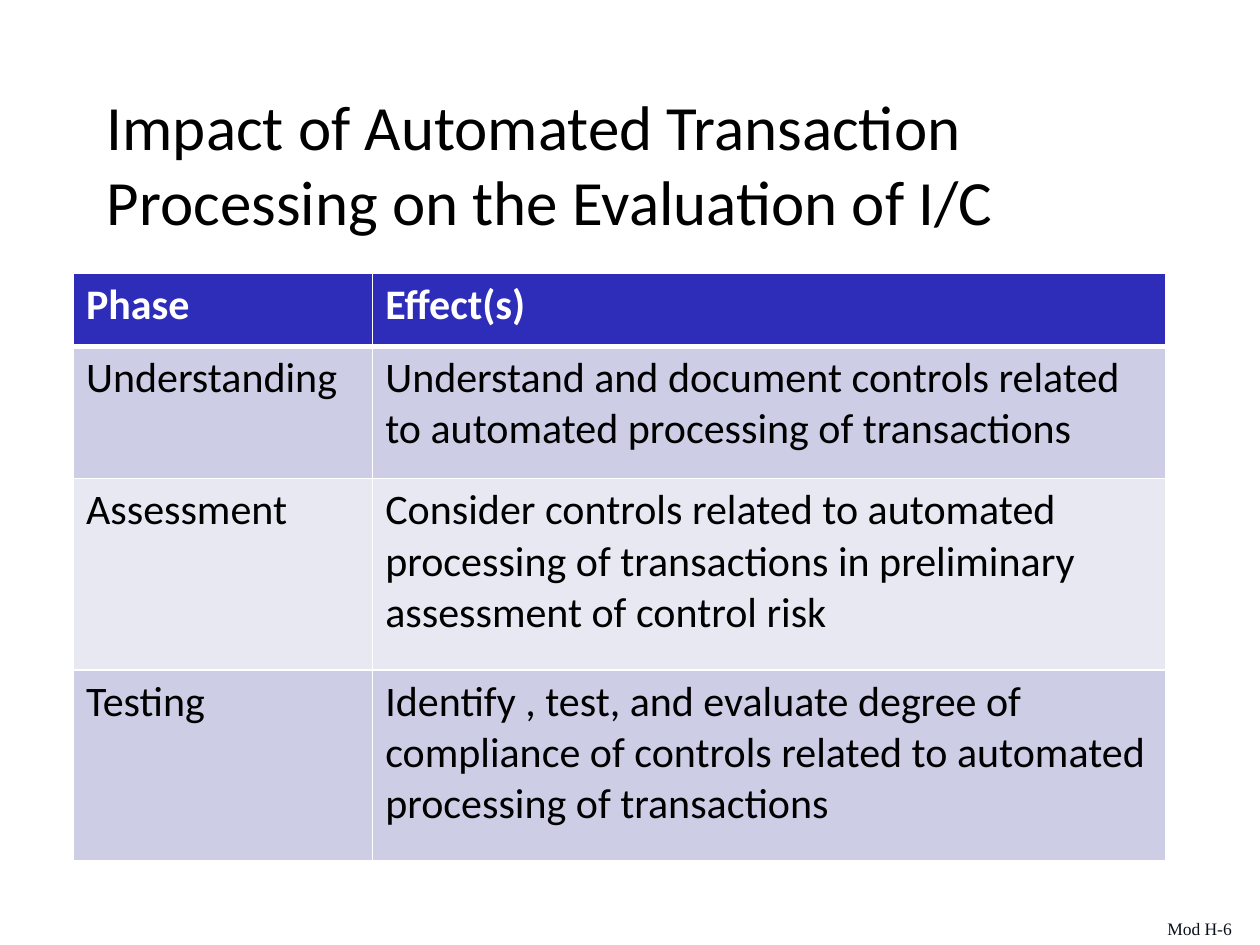
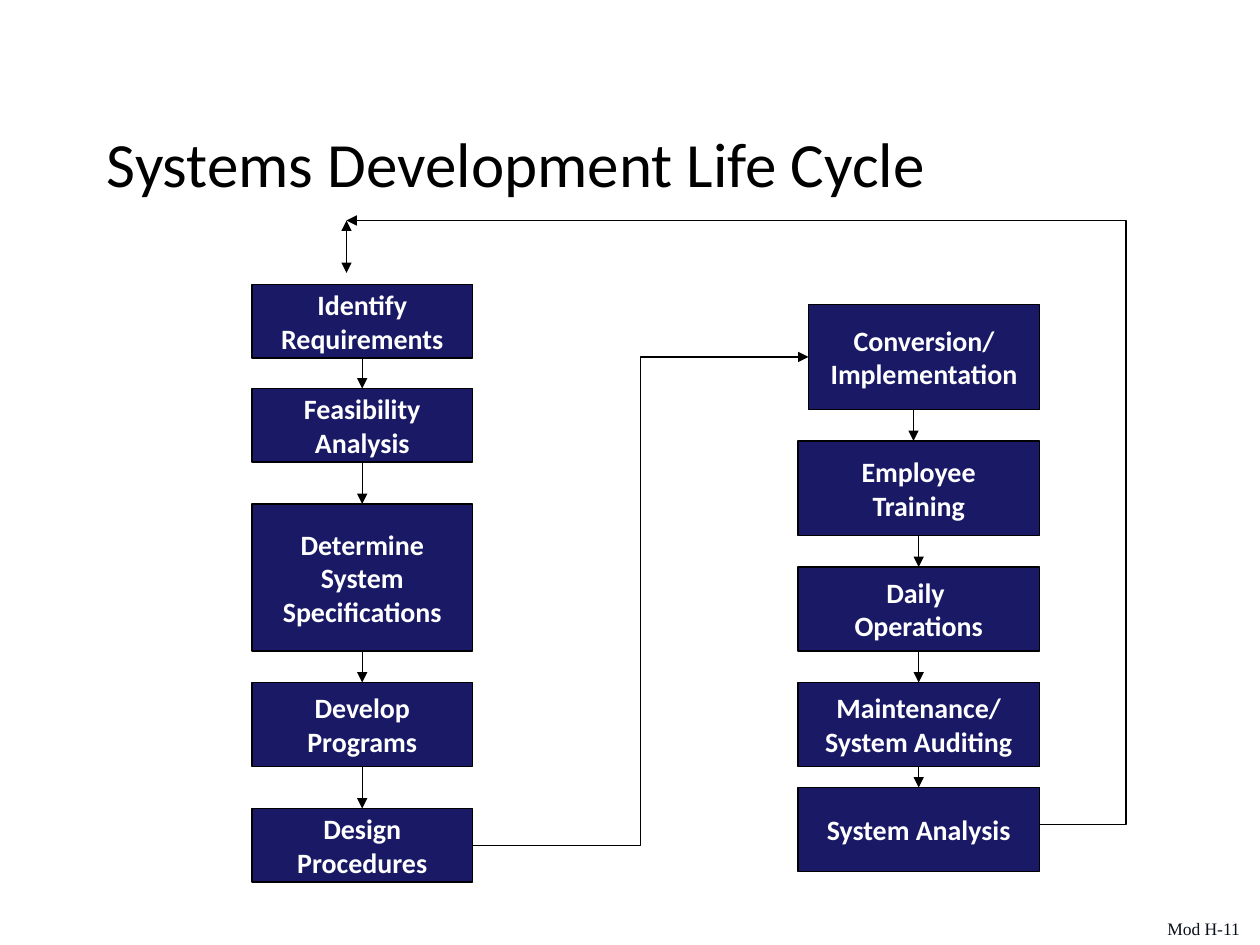
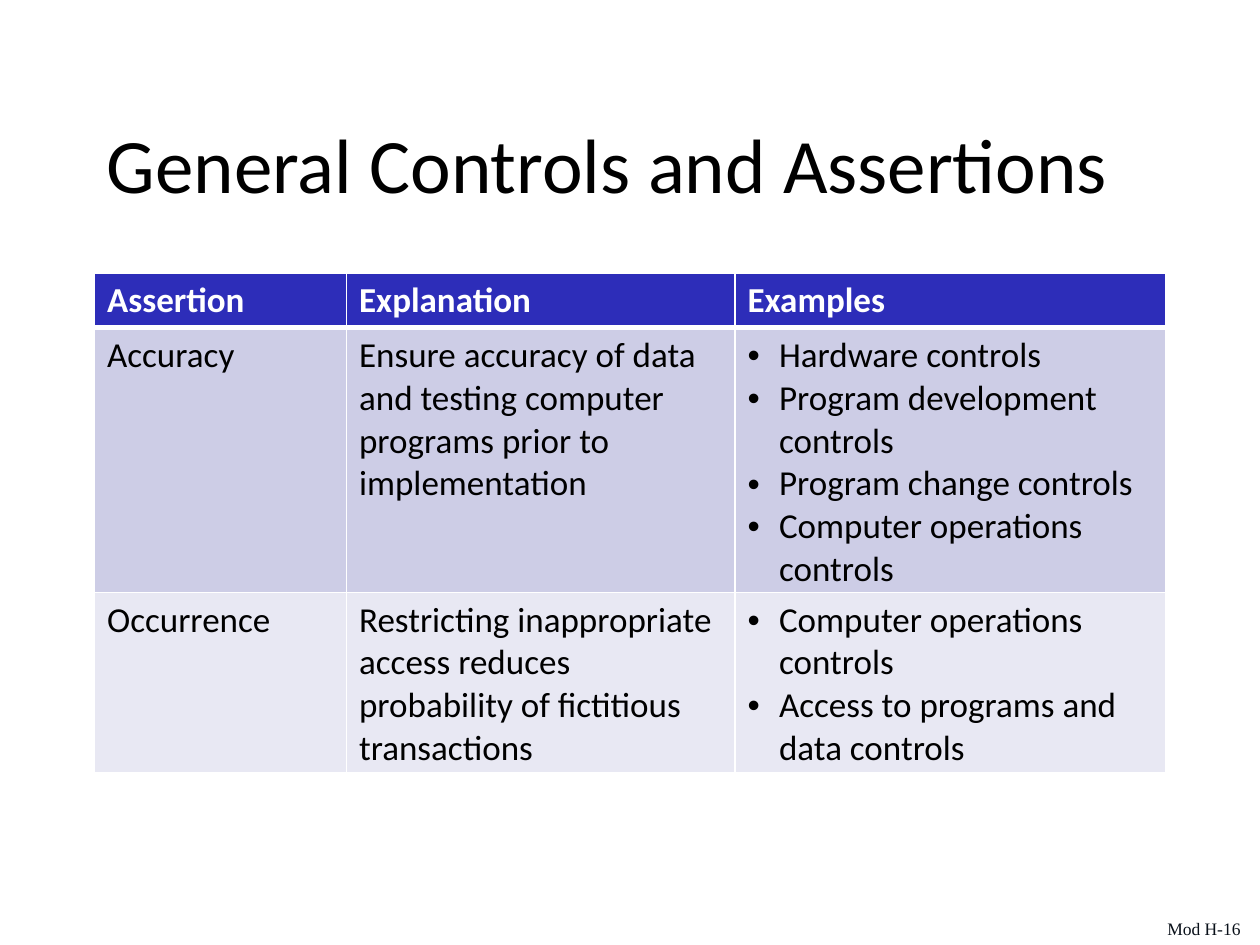
from itertools import pairwise

from lxml.etree import SubElement
from pptx import Presentation
from pptx.dml.color import RGBColor
from pptx.enum.shapes import MSO_CONNECTOR, MSO_SHAPE
from pptx.enum.text import MSO_ANCHOR, PP_ALIGN
from pptx.oxml.ns import qn
from pptx.util import Inches, Pt

# Grid: 12 units to the inch, so the slide is 120 by 90 units
UNIT = Inches(1) / 12
SLIDE_COLUMNS, SLIDE_ROWS = 120, 90

BLACK = RGBColor(0x00, 0x00, 0x00)
WHITE = RGBColor(0xFF, 0xFF, 0xFF)
FOOTER_INK = RGBColor(0x09, 0x10, 0x19)
HEADER_BLUE = RGBColor(0x2D, 0x2D, 0xB9)
BOX_NAVY = RGBColor(0x19, 0x19, 0x66)
BANDS = RGBColor(0xCD, 0xCD, 0xE6), RGBColor(0xE8, 0xE8, 0xF3)

BODY_FONT, FOOTER_FONT = "Calibri", "Times New Roman"
BOTTOM, LEFT, RIGHT, TOP = 2, 1, 3, 0

# Content: lengths in grid units; a list in a cell is a bulleted list
IMPACT = {
    "title": "Impact of Automated Transaction Processing on the Evaluation of I/C",
    "footer": "Mod H-6",
    "left": 7, "columns": (28.5, 75.5), "rows": (7, 12.6, 18.2, 18.2), "size": 24,
    "cells": [
        ("Phase", "Effect(s)"),
        ("Understanding",
         "Understand and document controls related to automated processing of transactions"),
        ("Assessment",
         "Consider controls related to automated processing of transactions "
         "in preliminary assessment of control risk"),
        ("Testing",
         "Identify , test, and evaluate degree of compliance of controls "
         "related to automated processing of transactions"),
    ],
}

ASSERTIONS = {
    "title": "General Controls and Assertions",
    "footer": "Mod H-16", "title_size": 44, "title_width": 101,
    "left": 9, "columns": (24, 37, 41), "rows": (5.2, 25.2, 17.2), "size": 20,
    "cells": [
        ("Assertion", "Explanation", "Examples"),
        ("Accuracy",
         "Ensure accuracy of data and testing computer programs prior to implementation",
         ["Hardware controls", "Program development controls",
          "Program change controls", "Computer operations controls"]),
        ("Occurrence",
         "Restricting inappropriate access reduces probability of fictitious transactions",
         ["Computer operations controls", "Access to programs and data controls"]),
    ],
}

# Each step: lines, left, top, width, height
DESIGN_STEPS = [
    (("Identify", "Requirements"), 24, 27.1, 21, 7),
    (("Feasibility", "Analysis"), 24, 37, 21, 7),
    (("Determine", "System", "Specifications"), 24, 48, 21, 14),
    (("Develop", "Programs"), 24, 65, 21, 8),
    (("Design", "Procedures"), 24, 77, 21, 7),
]
CONVERSION = (("Conversion/", "Implementation"), 77, 29, 22, 10)
OPERATION_STEPS = [
    (("Employee", "Training"), 76, 42, 23, 9),
    (("Daily ", "Operations"), 76, 54, 23, 8),
    (("Maintenance/", "System Auditing"), 76, 65, 23, 8),
    (("System Analysis",), 76, 75, 23, 8),
]


def units(*lengths):
    return [round(length * UNIT) for length in lengths]


def write(frame, lines, *, size, color=BLACK, font=BODY_FONT, bold=False,
          align=PP_ALIGN.LEFT, bullet=False):
    for index, line in enumerate(lines):
        para = frame.add_paragraph() if index else frame.paragraphs[0]
        para.alignment = align
        span = para.add_run()
        span.text = line
        span.font.name, span.font.size = font, Pt(size)
        span.font.bold, span.font.color.rgb = bold, color
        if bullet:
            properties = para._p.get_or_add_pPr()
            properties.set("marL", str(Inches(0.25)))
            properties.set("indent", str(-Inches(0.25)))
            SubElement(properties, qn("a:buFont"), typeface="Arial")
            SubElement(properties, qn("a:buChar"), char="•")


def add_text(page, text, place, *, anchor=MSO_ANCHOR.TOP, **style):
    frame = page.shapes.add_textbox(*units(*place)).text_frame
    frame.word_wrap = True
    frame.vertical_anchor = anchor
    write(frame, [text], **style)


def add_page(deck, title, footer, title_size=36, title_width=92):
    page = deck.slides.add_slide(deck.slide_layouts[6])
    add_text(page, title, (9, 8, title_width, 15), anchor=MSO_ANCHOR.MIDDLE, size=title_size)
    add_text(page, footer, (110, 86.8, 11, 3.2), size=10, color=FOOTER_INK, font=FOOTER_FONT)
    return page


def set_borders(cell, top, bottom):
    properties = cell._tc.get_or_add_tcPr()
    for side, width in (("L", 1), ("R", 1), ("T", top), ("B", bottom)):
        border = SubElement(properties, qn(f"a:ln{side}"), w=str(Pt(width)))
        fill = SubElement(border, qn("a:solidFill"))
        SubElement(fill, qn("a:srgbClr"), val=str(WHITE))


def add_table_page(deck, content):
    options = {key: content[key] for key in ("title_size", "title_width") if key in content}
    page = add_page(deck, content["title"], content["footer"], **options)
    columns, rows = content["columns"], content["rows"]
    place = units(content["left"], 26, sum(columns), sum(rows))
    table = page.shapes.add_table(len(rows), len(columns), *place).table
    table.horz_banding = False
    for column, width in zip(table.columns, units(*columns)):
        column.width = width
    for row, height in zip(table.rows, units(*rows)):
        row.height = height
    for row_index, values in enumerate(content["cells"]):
        header = row_index == 0
        for column_index, value in enumerate(values):
            cell = table.cell(row_index, column_index)
            set_borders(cell, 3 if row_index == 1 else 1, 3 if header else 1)
            cell.fill.solid()
            cell.fill.fore_color.rgb = HEADER_BLUE if header else BANDS[(row_index - 1) % 2]
            bullet = isinstance(value, list)
            write(cell.text_frame, value if bullet else [value], size=content["size"],
                  color=WHITE if header else BLACK, bold=header, bullet=bullet)


def add_step(page, lines, *place):
    box = page.shapes.add_shape(MSO_SHAPE.RECTANGLE, *units(*place))
    box.shadow.inherit = False
    box.fill.solid()
    box.fill.fore_color.rgb = BOX_NAVY
    box.line.color.rgb, box.line.width = BLACK, Pt(1)
    box.text_frame.word_wrap = False
    box.text_frame.vertical_anchor = MSO_ANCHOR.MIDDLE
    write(box.text_frame, lines, size=16, color=WHITE, bold=True, align=PP_ALIGN.CENTER)
    return box


def add_arrow(page, ends=(0, 0, 0, 0), kind=MSO_CONNECTOR.STRAIGHT, both=False, bend=None):
    arrow = page.shapes.add_connector(kind, *units(*ends))
    arrow.line.color.rgb, arrow.line.width = BLACK, Pt(0.75)
    line = arrow.line._get_or_add_ln()
    for end in ("headEnd", "tailEnd") if both else ("tailEnd",):
        SubElement(line, qn(f"a:{end}"), type="triangle")
    SubElement(arrow._element.spPr, qn("a:effectLst"))
    if bend is not None:
        guides = arrow._element.spPr.find(qn("a:prstGeom")).find(qn("a:avLst"))
        SubElement(guides, qn("a:gd"), name="adj1", fmla=f"val {round(bend * 100000)}")
    return arrow


def join(page, start, start_side, end, end_side, kind=MSO_CONNECTOR.STRAIGHT):
    arrow = add_arrow(page, kind=kind)
    arrow.begin_connect(start, start_side)
    arrow.end_connect(end, end_side)


def add_cycle_page(deck):
    page = add_page(deck, "Systems Development Life Cycle", "Mod H-11")
    design = [add_step(page, *step) for step in DESIGN_STEPS]
    conversion = add_step(page, *CONVERSION)
    operation = [add_step(page, *step) for step in OPERATION_STEPS]

    # Steps down each column, then across to the second one
    for chain in (design, operation):
        for upper, lower in pairwise(chain):
            join(page, upper, BOTTOM, lower, TOP)
    join(page, design[-1], RIGHT, conversion, LEFT, MSO_CONNECTOR.ELBOW)
    add_arrow(page, (87, 39, 87, 42))

    # Way back to the first step
    add_arrow(page, (99, 78.5, 33, 21), MSO_CONNECTOR.ELBOW, bend=-0.125)
    add_arrow(page, (33, 21, 33, 26), both=True)


def main():
    deck = Presentation()
    deck.slide_width, deck.slide_height = units(SLIDE_COLUMNS, SLIDE_ROWS)
    add_table_page(deck, IMPACT)
    add_cycle_page(deck)
    add_table_page(deck, ASSERTIONS)
    deck.save("out.pptx")


if __name__ == "__main__":
    main()
